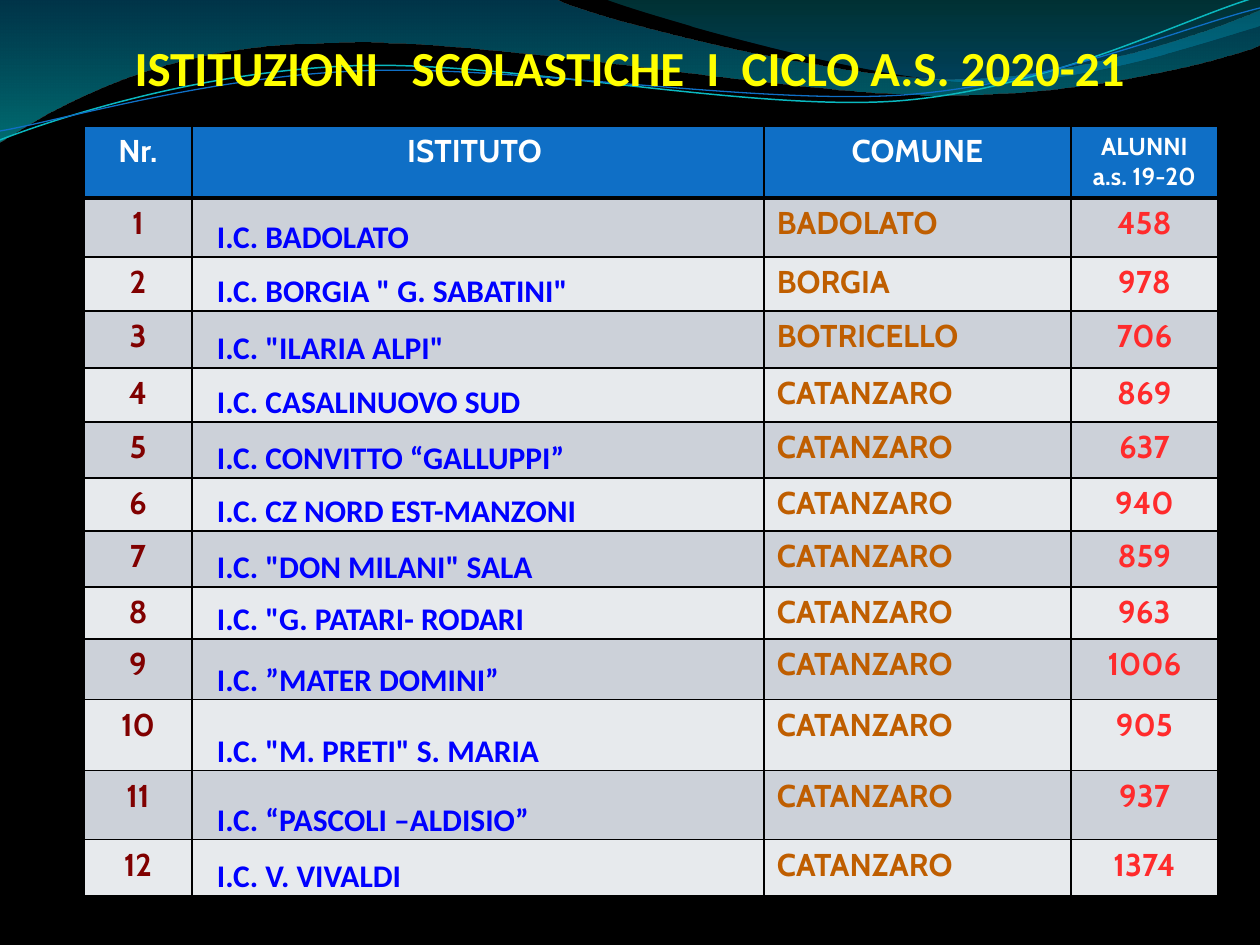
import math
from dataclasses import dataclass

from lxml import etree
from pptx import Presentation
from pptx import util as u
from pptx.dml.color import RGBColor
from pptx.enum import text
from pptx.oxml.ns import qn

PX = 914400 / 126  # EMU in one px
WAVE_MIDDLE = (629, 73)  # pivot of the rotated waves
LEFT, CENTER = text.PP_ALIGN.LEFT, text.PP_ALIGN.CENTER
TOP, BOTTOM = text.MSO_ANCHOR.TOP, text.MSO_ANCHOR.BOTTOM
BLACK, WHITE, BLUE = "000000", "FFFFFF", "0F6FC6"
BANDS = ("CCD1D9", "E7EAED")


@dataclass
class Stop:
    position: float
    color: str
    opacity: int


@dataclass
class Wave:
    """Each segment lists one point for a line, or three for a Bezier curve."""
    start: tuple
    segments: list
    stops: tuple = ()
    line_color: str = ""
    line_width: float = 0
    rotation: float = 0


@dataclass
class Column:
    width: int
    heading: tuple
    heading_size: int
    color: str
    font: str = "Cabin"
    align: int = CENTER
    anchor: int = TOP
    margins: tuple = (13, 6)
    indent: int = 0


WAVES = [
    Wave((0, -1), [
        [(554, -1)],
        [(600, 21), (837, 79), (955, 79)],
        [(1075, 79), (1207, 33), (1260, 11)],
        [(1261, 45)],
        [(1239, 55), (1096, 96), (940, 95)],
        [(784, 95), (481, 35), (324, 43)],
        [(163, 44), (58, 105), (-1, 142)],
        [(0, -1)],
    ], stops=(Stop(0, "0074A1", 45), Stop(1, "00C6CF", 55))),
    Wave((604, -1), [
        [(641, 14), (859, 78), (969, 82)],
        [(1079, 87), (1211, 40), (1260, 26)],
        [(1260, 0)],
        [(604, -1)],
    ], stops=(Stop(0, "00A1A9", 30), Stop(0.8, "008BBF", 45))),
    Wave((0, 140), [
        [(60, 117), (199, 72), (349, 66)],
        [(498, 59), (747, 112), (898, 101)],
        [(1050, 89), (1182, 19), (1257, -3)],
    ], line_color="0AB8BF", line_width=0.85, rotation=357.3),
    Wave((0, 131), [
        [(59, 121), (207, 77), (357, 71)],
        [(508, 64), (752, 105), (903, 95)],
        [(1053, 84), (1185, 26), (1260, 8)],
    ], line_color=BLUE, line_width=0.75, rotation=357.3),
]

COLUMNS = [
    Column(108, ("Nr.",), 18, "800000"),
    Column(572, ("ISTITUTO ",), 18, "0000FF", "Calibri", LEFT, BOTTOM, (0, 0), 25),
    Column(307, ("COMUNE",), 18, "BF5E00", align=LEFT),
    Column(147, ("ALUNNI", "a.s. 19-20"), 14, "FF2B2C"),
]
ROW_HEIGHTS = [72, 59, 54, 57, 54, 56, 53, 56, 52, 61, 71, 69, 56]
SCHOOLS = [
    ("I.C. BADOLATO", "BADOLATO", 458),
    ('I.C. BORGIA " G. SABATINI"', "BORGIA", 978),
    ('I.C. "ILARIA ALPI"', "BOTRICELLO", 706),
    ("I.C. CASALINUOVO SUD", "CATANZARO", 869),
    ("I.C. CONVITTO “GALLUPPI”", "CATANZARO", 637),
    ("I.C. CZ NORD EST-MANZONI", "CATANZARO", 940),
    ('I.C. "DON MILANI" SALA', "CATANZARO", 859),
    ('I.C. "G. PATARI- RODARI', "CATANZARO", 963),
    ("I.C. ”MATER DOMINI”", "CATANZARO", 1006),
    ('I.C. "M. PRETI" S. MARIA', "CATANZARO", 905),
    ("I.C. “PASCOLI –ALDISIO”", "CATANZARO", 937),
    ("I.C. V. VIVALDI", "CATANZARO", 1374),
]


def px(length: float) -> int:
    return round(length * PX)


def rgb(color: str) -> RGBColor:
    return RGBColor.from_string(color)


def unrotate(points: list, degrees: float) -> list:
    """Turn points back about the middle of the wave frame."""
    angle = math.radians(-degrees)
    middle_x, middle_y = WAVE_MIDDLE
    cos, sin = math.cos(angle), math.sin(angle)
    return [(middle_x + (x - middle_x) * cos - (y - middle_y) * sin,
             middle_y + (x - middle_x) * sin + (y - middle_y) * cos) for x, y in points]


def bend_segments(shape, segments: list) -> None:
    """Merge the three line steps of each curved segment into one Bezier curve."""
    steps = list(shape._element.iter(qn("a:lnTo")))
    for segment in segments:
        group, steps = steps[:len(segment)], steps[len(segment):]
        if len(group) == 3:
            curve = etree.Element(qn("a:cubicBezTo"))
            group[0].addprevious(curve)
            for step in group:
                curve.append(step[0])
                step.getparent().remove(step)


def draw_wave(slide, wave: Wave) -> None:
    points = [wave.start, *(point for segment in wave.segments for point in segment)]
    emu_points = [(px(x), px(y)) for x, y in unrotate(points, wave.rotation)]
    builder = slide.shapes.build_freeform(*emu_points[0])
    builder.add_line_segments(emu_points[1:], close=bool(wave.stops))
    shape = builder.convert_to_shape()
    bend_segments(shape, wave.segments)
    shape.shadow.inherit = False
    shape.rotation = wave.rotation
    if not wave.stops:
        shape.fill.background()
        shape.line.color.rgb = rgb(wave.line_color)
        shape.line.width = u.Pt(wave.line_width)
        return
    shape.line.fill.background()
    shape.fill.gradient()
    shape.fill.gradient_angle = 270
    for gradient_stop, stop in zip(shape.fill.gradient_stops, wave.stops):
        gradient_stop.position = stop.position
        gradient_stop.color.rgb = rgb(stop.color)
    colors = shape._element.spPr.find(qn("a:gradFill")).iter(qn("a:srgbClr"))
    for color, stop in zip(colors, wave.stops):
        etree.SubElement(color, qn("a:alpha"), val=str(stop.opacity * 1000))


def write(paragraph, words: str, size: int, color: str, font: str, align: int) -> None:
    paragraph.alignment = align
    run = paragraph.add_run()
    run.text = words
    run.font.size, run.font.bold, run.font.name = u.Pt(size), True, font
    run.font.color.rgb = rgb(color)


def add_borders(cell, top: int, bottom: int) -> None:
    properties = cell._tc.get_or_add_tcPr()
    for side, width in (("L", 1), ("R", 1), ("T", top), ("B", bottom)):
        line = etree.SubElement(properties, qn(f"a:ln{side}"), w=str(u.Pt(width)))
        fill = etree.SubElement(line, qn("a:solidFill"))
        etree.SubElement(fill, qn("a:srgbClr"), val=BLACK)


def fill_cell(cell, column: Column, row: int, value: str) -> None:
    is_heading = row == 0
    add_borders(cell, 3 if row == 1 else 1, 3 if is_heading else 1)
    cell.fill.solid()
    cell.fill.fore_color.rgb = rgb(BLUE if is_heading else BANDS[(row - 1) % 2])
    side, edge = (13, 6) if is_heading else column.margins
    cell.margin_left = cell.margin_right = px(side)
    cell.margin_top = cell.margin_bottom = px(edge)
    frame = cell.text_frame
    if is_heading:
        for index, words in enumerate(column.heading):
            paragraph = frame.add_paragraph() if index else frame.paragraphs[0]
            write(paragraph, words, column.heading_size, WHITE, "Cabin", CENTER)
        return
    cell.vertical_anchor = column.anchor
    paragraph = frame.paragraphs[0]
    if column.indent:
        properties = paragraph._p.get_or_add_pPr()
        properties.set("marL", str(px(column.indent)))
        properties.set("indent", "0")
    write(paragraph, value, 18, column.color, column.font, column.align)


def draw_table(slide) -> None:
    width = sum(column.width for column in COLUMNS)
    table = slide.shapes.add_table(len(ROW_HEIGHTS), len(COLUMNS), px(84), px(126),
                                   px(width), px(sum(ROW_HEIGHTS))).table
    for row, height in zip(table.rows, ROW_HEIGHTS):
        row.height = px(height)
    for index, column in enumerate(COLUMNS):
        table.columns[index].width = px(column.width)
        fill_cell(table.cell(0, index), column, 0, "")
    for number, school in enumerate(SCHOOLS, start=1):
        for index, value in enumerate((number, *school)):
            fill_cell(table.cell(number, index), COLUMNS[index], number, str(value))


def draw_title(slide) -> None:
    frame = slide.shapes.add_textbox(px(73), px(31), px(1113), px(72)).text_frame
    frame.word_wrap = True
    frame.auto_size = text.MSO_AUTO_SIZE.SHAPE_TO_FIT_TEXT
    write(frame.paragraphs[0], "ISTITUZIONI   SCOLASTICHE  I  CICLO A.S. 2020-21",
          28, "FFFF00", "Calibri", CENTER)


def main() -> None:
    presentation = Presentation()
    presentation.slide_width, presentation.slide_height = px(1260), px(945)
    slide = presentation.slides.add_slide(presentation.slide_layouts[6])
    slide.background.fill.solid()
    slide.background.fill.fore_color.rgb = rgb(BLACK)
    for wave in WAVES:
        draw_wave(slide, wave)
    draw_table(slide)
    draw_title(slide)
    presentation.save("out.pptx")


if __name__ == "__main__":
    main()
